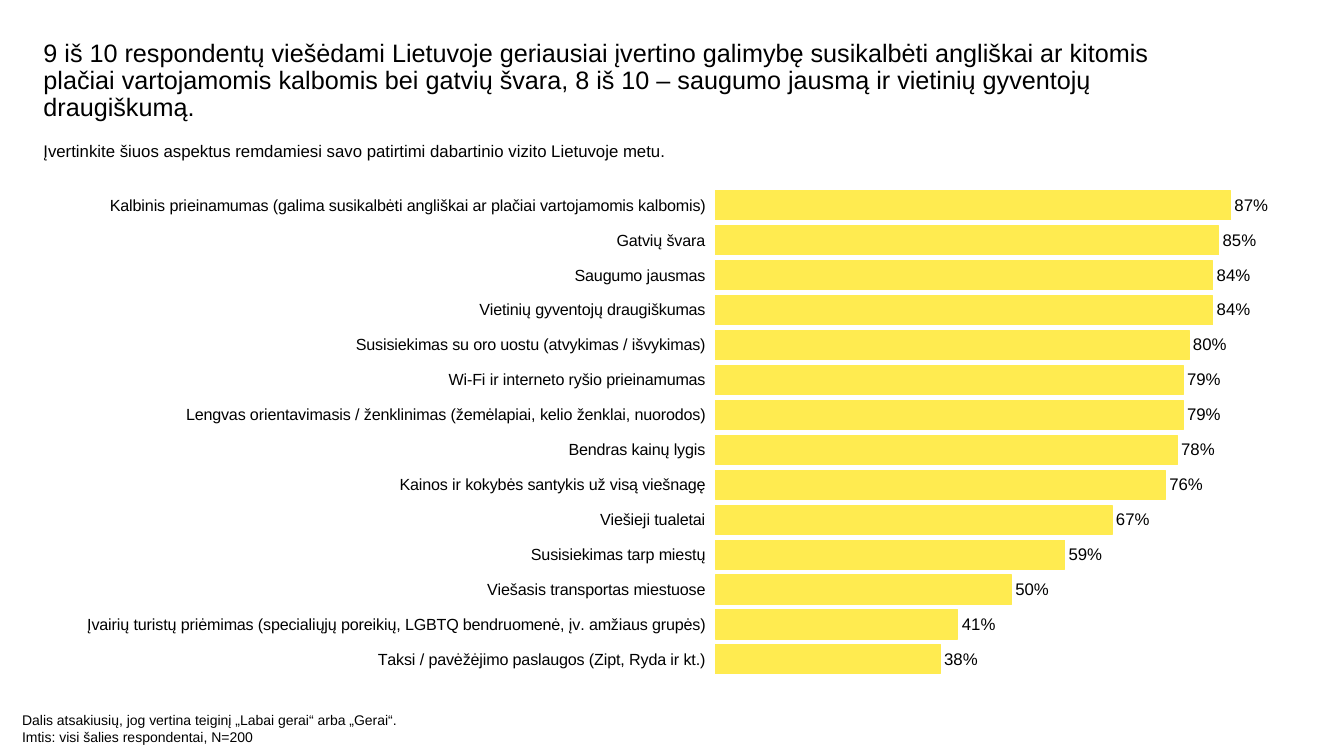
from lxml import etree
from pptx import Presentation
from pptx.chart.data import CategoryChartData
from pptx.dml.color import RGBColor
from pptx.enum.chart import XL_CHART_TYPE, XL_LABEL_POSITION, XL_TICK_LABEL_POSITION, XL_TICK_MARK
from pptx.enum.text import MSO_ANCHOR, MSO_AUTO_SIZE, PP_ALIGN
from pptx.oxml import parse_xml
from pptx.oxml.ns import nsdecls
from pptx.util import Pt

BAR_CHART = XL_CHART_TYPE.BAR_CLUSTERED
OUTSIDE_END = XL_LABEL_POSITION.OUTSIDE_END
LABELS_LOW = XL_TICK_LABEL_POSITION.LOW
NO_TICKS = XL_TICK_MARK.NONE

BLACK = RGBColor(0x00, 0x00, 0x00)
WHITE = RGBColor(0xFF, 0xFF, 0xFF)
YELLOW = RGBColor(0xFF, 0xEB, 0x50)
FONT = "Arial"

TITLE = ("9 iš 10 respondentų viešėdami Lietuvoje geriausiai įvertino galimybę "
         "susikalbėti angliškai ar kitomis plačiai vartojamomis kalbomis bei gatvių "
         "švara, 8 iš 10 – saugumo jausmą ir vietinių gyventojų draugiškumą.")
QUESTION = "Įvertinkite šiuos aspektus remdamiesi savo patirtimi dabartinio vizito Lietuvoje metu."
FOOTNOTES = ["Dalis atsakiusių, jog vertina teiginį „Labai gerai“ arba „Gerai“.",
             "Imtis: visi šalies respondentai, N=200"]
RATINGS = {
    "Kalbinis prieinamumas (galima susikalbėti angliškai ar plačiai vartojamomis kalbomis)": 0.87,
    "Gatvių švara": 0.85,
    "Saugumo jausmas": 0.84,
    "Vietinių gyventojų draugiškumas": 0.84,
    "Susisiekimas su oro uostu (atvykimas / išvykimas)": 0.80,
    "Wi-Fi ir interneto ryšio prieinamumas": 0.79,
    "Lengvas orientavimasis / ženklinimas (žemėlapiai, kelio ženklai, nuorodos)": 0.79,
    "Bendras kainų lygis": 0.78,
    "Kainos ir kokybės santykis už visą viešnagę": 0.76,
    "Viešieji tualetai": 0.67,
    "Susisiekimas tarp miestų": 0.59,
    "Viešasis transportas miestuose": 0.50,
    "Įvairių turistų priėmimas (specialiųjų poreikių, LGBTQ bendruomenė, įv. amžiaus grupės)": 0.41,
    "Taksi / pavėžėjimo paslaugos (Zipt, Ryda ir kt.)": 0.38,
}


def format_font(font, size):
    for name, value in {"name": FONT, "size": Pt(size), "bold": False}.items():
        setattr(font, name, value)
    font.color.rgb = BLACK


def fill_box(box, place, lines, size, spacing):
    box.left, box.top, box.width, box.height = [Pt(length) for length in place]
    frame = box.text_frame
    frame.text = "\n".join(lines)
    settings = {"word_wrap": True, "auto_size": MSO_AUTO_SIZE.NONE,
                "vertical_anchor": MSO_ANCHOR.TOP, "margin_left": 0,
                "margin_top": 0, "margin_right": 0, "margin_bottom": 0}
    for name, value in settings.items():
        setattr(frame, name, value)
    for para in frame.paragraphs:
        para.alignment = PP_ALIGN.LEFT
        para.line_spacing = spacing
        for span in para.runs:
            format_font(span.font, size)


deck = Presentation()
deck.slide_width, deck.slide_height = Pt(960), Pt(540)
page = deck.slides.add_slide(deck.slide_layouts[5])

# Title, survey question and footnotes
fill_box(page.shapes.title, (31, 28.8, 810, 43.2), [TITLE], 18, 0.9)
for place, lines, size in [((31, 100.8, 856, 44), [QUESTION], 12),
                           ((15.8, 508.3, 278, 31.7), FOOTNOTES, 10)]:
    fill_box(page.shapes.add_textbox(0, 0, 0, 0), place, lines, size, 1.0)

# Bar chart of ratings
data = CategoryChartData(number_format="0%")
data.categories = list(RATINGS)
data.add_series("Series 1", list(RATINGS.values()))
chart = page.shapes.add_chart(BAR_CHART, Pt(-110.9), Pt(123.1), Pt(1055.5), Pt(385.9), data).chart
chart.has_legend = False
chart.has_title = False
format_font(chart.font, 10)

# Axes
aspects = chart.category_axis
for name, value in {"reverse_order": True, "major_tick_mark": NO_TICKS,
                    "minor_tick_mark": NO_TICKS, "has_major_gridlines": False,
                    "tick_label_position": LABELS_LOW}.items():
    setattr(aspects, name, value)
aspects.format.line.color.rgb = WHITE
aspects.format.line.width = Pt(0.75)
format_font(aspects.tick_labels.font, 11.5)
for name, value in {"minimum_scale": 0, "maximum_scale": 1,
                    "has_major_gridlines": False, "visible": False}.items():
    setattr(chart.value_axis, name, value)

# Bars and their values
plot = chart.plots[0]
plot.gap_width = 20
plot.vary_by_categories = False
bars = plot.series[0]
bars.format.fill.solid()
bars.format.fill.fore_color.rgb = YELLOW
bars.format.line.color.rgb = YELLOW
bars.format.line.width = Pt(0.75)
plot.has_data_labels = True
labels = plot.data_labels
for name, value in {"show_value": True, "number_format": "0%",
                    "number_format_is_linked": False, "position": OUTSIDE_END}.items():
    setattr(labels, name, value)
format_font(labels.font, 12)

# Fixed place of the plot area inside the chart
layout = parse_xml(f'<c:layout {nsdecls("c")}><c:manualLayout/></c:layout>')
for tag, value in [("layoutTarget", "inner"), ("xMode", "edge"), ("yMode", "edge"),
                   ("x", 0.589), ("y", 0.029), ("w", 0.401), ("h", 0.905)]:
    etree.SubElement(layout[0], layout.tag.replace("layout", tag)).set("val", str(value))
plot_area = chart._chartSpace.chart.plotArea
for old_layout in plot_area.xpath("c:layout"):
    plot_area.remove(old_layout)
plot_area.insert(0, layout)

deck.save("out.pptx")
